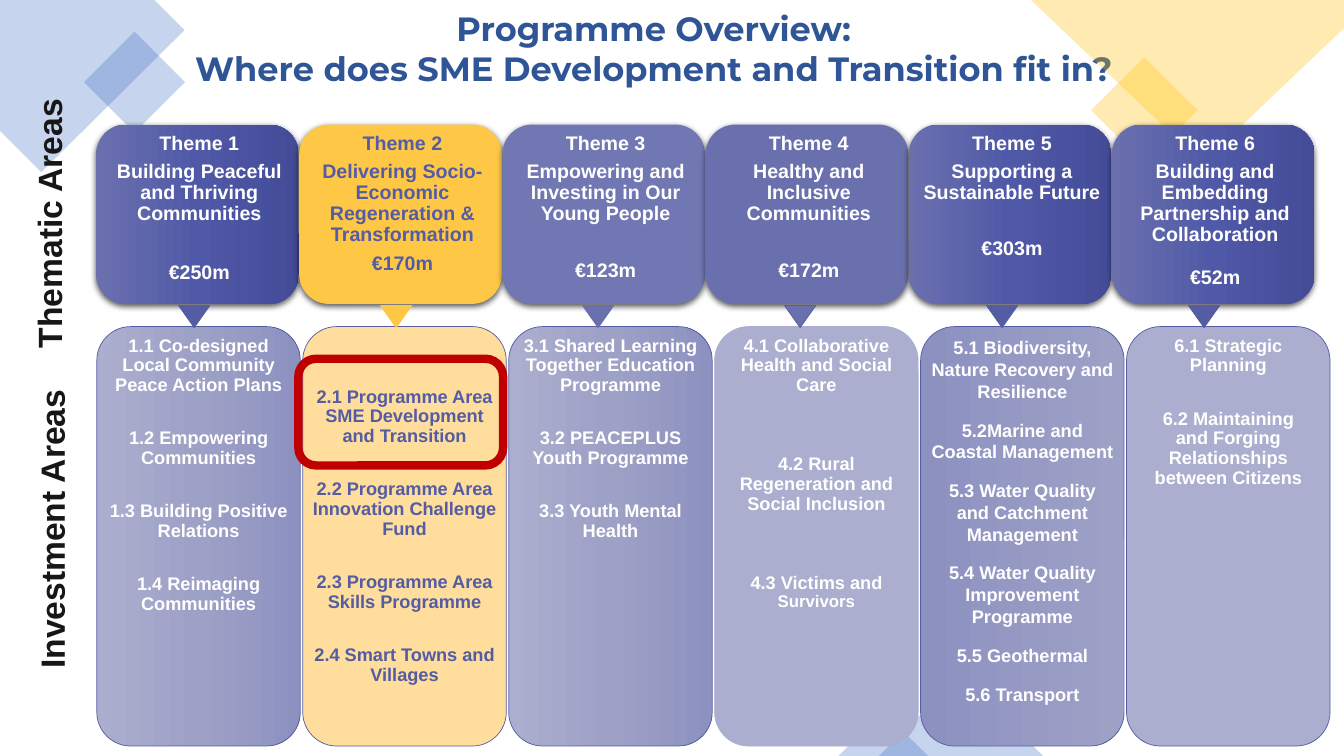
"""Build the programme overview slide: six themes with their investment areas."""
from copy import deepcopy

from lxml import etree
from pptx import Presentation
from pptx.dml.color import RGBColor
from pptx.enum import shapes, text
from pptx.oxml.ns import qn
from pptx.util import Cm, Pt

WHITE = RGBColor(0xFF, 0xFF, 0xFF)
INK = RGBColor(0x18, 0x17, 0x17)
TITLE_BLUE = RGBColor(0x2F, 0x55, 0x97)
PALE_BLUE = RGBColor(0x44, 0x72, 0xC4)
PALE_GOLD = RGBColor(0xFF, 0xC0, 0x00)
INDIGO = RGBColor(0x54, 0x5C, 0xA3)
SLATE = RGBColor(0x6A, 0x70, 0xAE)
SOFT_SLATE = RGBColor(0x71, 0x77, 0xB2)
GOLD = RGBColor(0xFF, 0xC7, 0x46)
CREAM = RGBColor(0xFF, 0xDD, 0x9C)
LILAC = RGBColor(0xAB, 0xAE, 0xCE)
MID_LILAC = RGBColor(0x9E, 0xA1, 0xC6)
DEEP_LILAC = RGBColor(0x8D, 0x91, 0xC0)
RED = RGBColor(0xC0, 0x00, 0x00)
DEEP_BLEND = [SLATE, RGBColor(0x50, 0x59, 0xA7), RGBColor(0x44, 0x4C, 0x98)]
LILAC_BLEND = [LILAC, MID_LILAC, DEEP_LILAC]

KIND = shapes.MSO_SHAPE
CENTER = text.PP_ALIGN.CENTER

THEMES = [
    ("Building Peaceful and Thriving Communities", "€250m", 22, DEEP_BLEND, WHITE, INDIGO, INDIGO),
    ("Delivering Socio- Economic Regeneration & Transformation", "€170m", 0, [GOLD], INDIGO, GOLD, GOLD),
    ("Empowering and Investing in Our Young People", "€123m", 20, [SOFT_SLATE], WHITE, SLATE, SLATE),
    ("Healthy and Inclusive Communities", "€172m", 20, [SLATE], WHITE, SLATE, INDIGO),
    ("Supporting a Sustainable Future", "€303m", 20, DEEP_BLEND, WHITE, INDIGO, INDIGO),
    ("Building and Embedding Partnership and Collaboration", "€52m", 10.5, DEEP_BLEND, WHITE, INDIGO, INDIGO),
]
AREAS = [
    (["1.1 Co-designed Local Community Peace Action Plans", "1.2 Empowering Communities",
      "1.3 Building Positive Relations", "1.4 Reimaging Communities"],
     24, 0.9, LILAC_BLEND, INDIGO, WHITE),
    (["2.1 Programme Area SME Development and Transition",
      "2.2 Programme Area Innovation Challenge Fund",
      "2.3 Programme Area Skills Programme", "2.4 Smart Towns and Villages"],
     24, 0.9, [CREAM], INDIGO, INDIGO),
    (["3.1 Shared Learning Together Education Programme", "3.2 PEACEPLUS Youth Programme",
      "3.3 Youth Mental Health"],
     24, 0.9, LILAC_BLEND, INDIGO, WHITE),
    (["4.1 Collaborative Health and Social Care", "4.2 Rural Regeneration and Social Inclusion",
      "4.3 Victims and "],
     42.5, 0.9, [LILAC], LILAC, WHITE),
    (["5.1 Biodiversity, Nature Recovery and Resilience", "5.2Marine and Coastal Management",
      "5.3 Water Quality and Catchment Management", "5.4 Water Quality Improvement Programme",
      "5.5 Geothermal", "5.6 Transport"],
     12, 1.0, [DEEP_LILAC, MID_LILAC], INDIGO, WHITE),
    (["6.1 Strategic Planning", "6.2 Maintaining and Forging Relationships between Citizens"],
     24, 0.9, [LILAC], INDIGO, WHITE),
]


def paint(shape, colours, line=None, width=0.5, alpha=None):
    """Give a shape a plain or left-to-right blended fill and an outline."""
    shape.shadow.inherit = False
    if not colours:
        shape.fill.background()
    elif len(colours) == 1:
        shape.fill.solid()
        shape.fill.fore_color.rgb = colours[0]
    else:
        shape.fill.gradient()
        shape.fill.gradient_angle = 0
        stop_list = shape.element.spPr.find(".//" + qn("a:gsLst"))
        while len(stop_list) < len(colours):
            stop_list.append(deepcopy(stop_list[-1]))
        for order, (stop, colour) in enumerate(zip(shape.fill.gradient_stops, colours)):
            stop.color.rgb = colour
            stop.position = order / (len(colours) - 1)
    if alpha:
        colour_tag = shape.element.spPr.find(".//" + qn("a:srgbClr"))
        etree.SubElement(colour_tag, qn("a:alpha"), val=str(alpha * 1000))
    if line is None:
        shape.line.fill.background()
    else:
        shape.line.color.rgb = line
        shape.line.width = Pt(width)


def write(frame, lines, size, colour, gaps, spacing=1.0, font="Arial", margins=(0, 0)):
    """Write centred bold paragraphs, each gap lying before its line."""
    frame.word_wrap = True
    frame.vertical_anchor = text.MSO_ANCHOR.TOP
    frame.margin_left, frame.margin_right = (Cm(margin) for margin in margins)
    frame.margin_top = frame.margin_bottom = 0
    frame.text = "\n".join(lines)
    for paragraph, gap in zip(frame.paragraphs, gaps):
        paragraph.alignment = CENTER
        paragraph.line_spacing = spacing
        paragraph.space_before = Pt(gap)
        paragraph.font.name = font
        paragraph.font.size = Pt(size)
        paragraph.font.bold = True
        paragraph.font.color.rgb = colour


prs = Presentation()
prs.slide_width, prs.slide_height = Cm(33.87), Cm(19.05)
slide = prs.slides.add_slide(prs.slide_layouts[5])

CORNERS = [
    ([(3.89, 0), (0, 0), (0, 3.3), (1.04, 4.34), (4.65, 0.76)], PALE_BLUE),
    ([(33.87, 0), (25.98, 0), (30.3, 4.11), (33.87, 0.71)], PALE_GOLD),
]
for points, colour in CORNERS:
    start, *rest = [(Cm(x), Cm(y)) for x, y in points]
    outline = slide.shapes.build_freeform(*start)
    outline.add_line_segments(rest)
    paint(outline.convert_to_shape(), [colour], alpha=30)

ACCENTS = [
    (KIND.RECTANGLE, 2.49, 1.17, 1.8, 1.8, 45, PALE_BLUE),
    (KIND.RECTANGLE, 27.89, 1.83, 1.9, 1.9, 45, PALE_GOLD),
    (KIND.ISOSCELES_TRIANGLE, 22.15, 16.99, 4.14, 2.06, 0, PALE_BLUE),
    (KIND.ISOSCELES_TRIANGLE, 21.13, 17.93, 2.26, 1.12, 0, PALE_BLUE),
]
for kind, left, top, width, height, turn, colour in ACCENTS:
    accent = slide.shapes.add_shape(kind, Cm(left), Cm(top), Cm(width), Cm(height))
    accent.rotation = turn
    paint(accent, [colour], alpha=30)

title = slide.shapes.title
title.left, title.top, title.width, title.height = Cm(3.7), Cm(0.2), Cm(25.55), Cm(2.1)
write(title.text_frame,
      ["Programme Overview:", "Where does SME Development and Transition fit in?"],
      24, TITLE_BLUE, [0, 0], font="Montserrat")

for column, (name, budget, gap, fills, ink, _, _) in enumerate(THEMES):
    theme = slide.shapes.add_shape(
        KIND.ROUNDED_RECTANGLE, Cm(2.42 + 5.12 * column), Cm(3.14), Cm(5.11), Cm(4.52))
    paint(theme, fills)
    effects = theme.element.spPr.find(qn("a:effectLst"))
    shade = etree.SubElement(effects, qn("a:outerShdw"), blurRad="57150", dist="19050",
                             dir="5400000", algn="ctr", rotWithShape="0")
    black = etree.SubElement(shade, qn("a:srgbClr"), val="000000")
    etree.SubElement(black, qn("a:alpha"), val="63000")
    write(theme.text_frame, [f"Theme {column + 1}", name, budget], 14, ink,
          [0, 5, 5 + gap], 0.9, margins=(0.1, 0))

area_frames = []
for column, (items, gap, spacing, fills, line, ink) in enumerate(AREAS):
    area = slide.shapes.add_shape(
        KIND.ROUNDED_RECTANGLE, Cm(2.44 + 5.19 * column), Cm(8.23), Cm(5.13), Cm(10.57))
    paint(area, fills, line)
    side = 0.23 if column == 5 else 0
    write(area.text_frame, items, 13, ink, [0] + [gap] * (len(items) - 1), spacing,
          margins=(side, side))
    area_frames.append(area.text_frame)
area_frames[1].vertical_anchor = text.MSO_ANCHOR.MIDDLE
survivors = area_frames[3].paragraphs[-1].add_run()
survivors.text = "Survivors"
survivors.font.size = Pt(12)

for column, (*_, fill, line) in enumerate(THEMES):
    pointer = slide.shapes.add_shape(
        KIND.FLOWCHART_MERGE, Cm(4.5 + 5.09 * column), Cm(7.7), Cm(0.79), Cm(0.56))
    paint(pointer, [fill], line)

highlight = slide.shapes.add_shape(
    KIND.ROUNDED_RECTANGLE, Cm(7.52), Cm(9.04), Cm(5.16), Cm(2.69))
paint(highlight, [], RED, 6)

for label, left, top, width in [("Investment Areas", -2.84, 12.7, 8.28),
                                ("Thematic Areas", -2.34, 5.0, 7.14)]:
    heading = slide.shapes.add_textbox(Cm(left), Cm(top), Cm(width), Cm(1.27))
    heading.rotation = 270
    write(heading.text_frame, [label], 24, INK, [0])
    heading.text_frame.vertical_anchor = text.MSO_ANCHOR.MIDDLE

prs.save("out.pptx")
